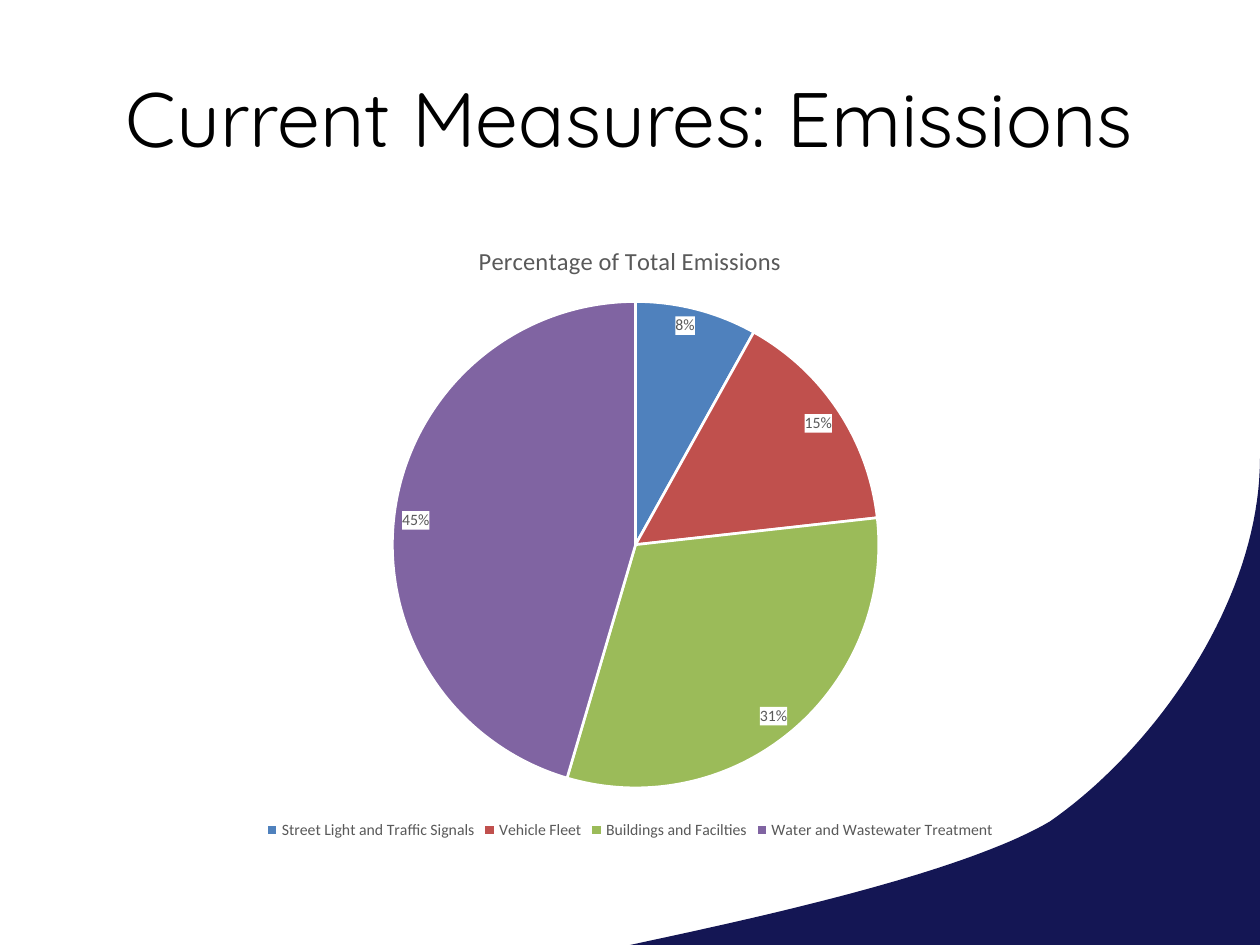
from lxml import etree
from pptx import Presentation
from pptx.chart.data import CategoryChartData
from pptx.dml.color import RGBColor
from pptx.enum.chart import XL_CHART_TYPE, XL_LABEL_POSITION, XL_LEGEND_POSITION
from pptx.enum.text import MSO_ANCHOR, PP_ALIGN
from pptx.oxml import parse_xml
from pptx.oxml.ns import nsdecls, qn
from pptx.util import Pt

COLORS = {
    "navy": "141654",
    "black": "000000",
    "gray": "595959",
    "white": "FFFFFF",
}
EMISSIONS = [
    ("Street Light and Traffic Signals", 8, "4F81BD"),
    ("Vehicle Fleet", 15, "C0504D"),
    ("Buildings and Facilties", 31, "9BBB59"),
    ("Water and Wastewater Treatment", 45, "8064A2"),
]
SWOOSH_START = (360, 540)
SWOOSH_CURVES = [
    [(360, 540), (425, 526), (548, 500), (600, 469.4)],
    [(600, 469.4), (660, 427.7), (720, 343.4), (720, 262)],
]


def rgb(value):
    return RGBColor.from_string(value)


def set_font(font, name, size, color):
    font.name = name
    font.size = Pt(size)
    font.bold = False
    font.color.rgb = rgb(color)


def curve_points(controls, steps=40):
    for step in range(1, steps + 1):
        t = step / steps
        weights = ((1 - t) ** 3, 3 * t * (1 - t) ** 2, 3 * t * t * (1 - t), t ** 3)
        yield tuple(
            Pt(sum(weight * point[axis] for weight, point in zip(weights, controls)))
            for axis in (0, 1)
        )


def add_swoosh(page):
    builder = page.shapes.build_freeform(*map(Pt, SWOOSH_START))
    for curve in SWOOSH_CURVES:
        builder.add_line_segments(list(curve_points(curve)), close=False)
    builder.add_line_segments([(Pt(720), Pt(540))], close=True)
    swoosh = builder.convert_to_shape()
    swoosh.shadow.inherit = False
    swoosh.fill.solid()
    swoosh.fill.fore_color.rgb = rgb(COLORS["navy"])
    swoosh.line.fill.background()


def add_title(page, text):
    box = page.shapes.add_textbox(Pt(36), Pt(21.6), Pt(648), Pt(90))
    frame = box.text_frame
    frame.word_wrap = True
    frame.vertical_anchor = MSO_ANCHOR.MIDDLE
    para = frame.paragraphs[0]
    para.text = text
    para.alignment = PP_ALIGN.CENTER
    set_font(para.font, "Quicksand", 44, COLORS["black"])


def place_plot(chart, left, top, width, height):
    plot_area = chart.plots[0]._element.getparent()
    for old in plot_area.findall(qn("c:layout")):
        plot_area.remove(old)
    layout = parse_xml(f"<c:layout {nsdecls('c')}><c:manualLayout/></c:layout>")
    settings = {
        "layoutTarget": "inner", "xMode": "edge", "yMode": "edge",
        "x": left, "y": top, "w": width, "h": height,
    }
    for tag, value in settings.items():
        etree.SubElement(layout[0], qn(f"c:{tag}")).set("val", str(value))
    plot_area.insert(0, layout)


def style_labels(labels):
    labels.show_percentage = True
    labels.show_value = False
    labels.number_format = "0%"
    labels.number_format_is_linked = False
    labels.position = XL_LABEL_POSITION.INSIDE_END
    set_font(labels.font, "Calibri", 9, COLORS["gray"])
    background = parse_xml(
        f"<c:spPr {nsdecls('c', 'a')}><a:solidFill>"
        f"<a:srgbClr val=\"{COLORS['white']}\"/></a:solidFill></c:spPr>"
    )
    labels._element.find(qn("c:txPr")).addprevious(background)


def add_pie(page, title):
    data = CategoryChartData()
    data.categories = [name for name, _, _ in EMISSIONS]
    data.add_series("Series 1", [value for _, value, _ in EMISSIONS])
    chart = page.shapes.add_chart(
        XL_CHART_TYPE.PIE, Pt(36), Pt(126), Pt(648), Pt(356.4), data
    ).chart
    set_font(chart.font, "Calibri", 10, COLORS["black"])

    chart.has_title = True
    para = chart.chart_title.text_frame.paragraphs[0]
    para.text = title
    set_font(para.font, "Calibri", 14, COLORS["gray"])
    chart.chart_title.include_in_layout = False

    chart.has_legend = True
    chart.legend.position = XL_LEGEND_POSITION.BOTTOM
    chart.legend.include_in_layout = False
    set_font(chart.legend.font, "Calibri", 9, COLORS["gray"])

    plot = chart.plots[0]
    plot.vary_by_categories = True
    series = plot.series[0]
    for index, (_, _, color) in enumerate(EMISSIONS):
        wedge = series.points[index].format
        wedge.fill.solid()
        wedge.fill.fore_color.rgb = rgb(color)
        wedge.line.color.rgb = rgb(COLORS["white"])
        wedge.line.width = Pt(1.5)
    style_labels(series.data_labels)
    place_plot(chart, 0.29, 0.13, 0.43, 0.78)


def main():
    deck = Presentation()
    deck.slide_width, deck.slide_height = Pt(720), Pt(540)
    page = deck.slides.add_slide(deck.slide_layouts[6])
    add_swoosh(page)
    add_title(page, "Current Measures: Emissions")
    add_pie(page, "Percentage of Total Emissions")
    deck.save("out.pptx")


if __name__ == "__main__":
    main()
